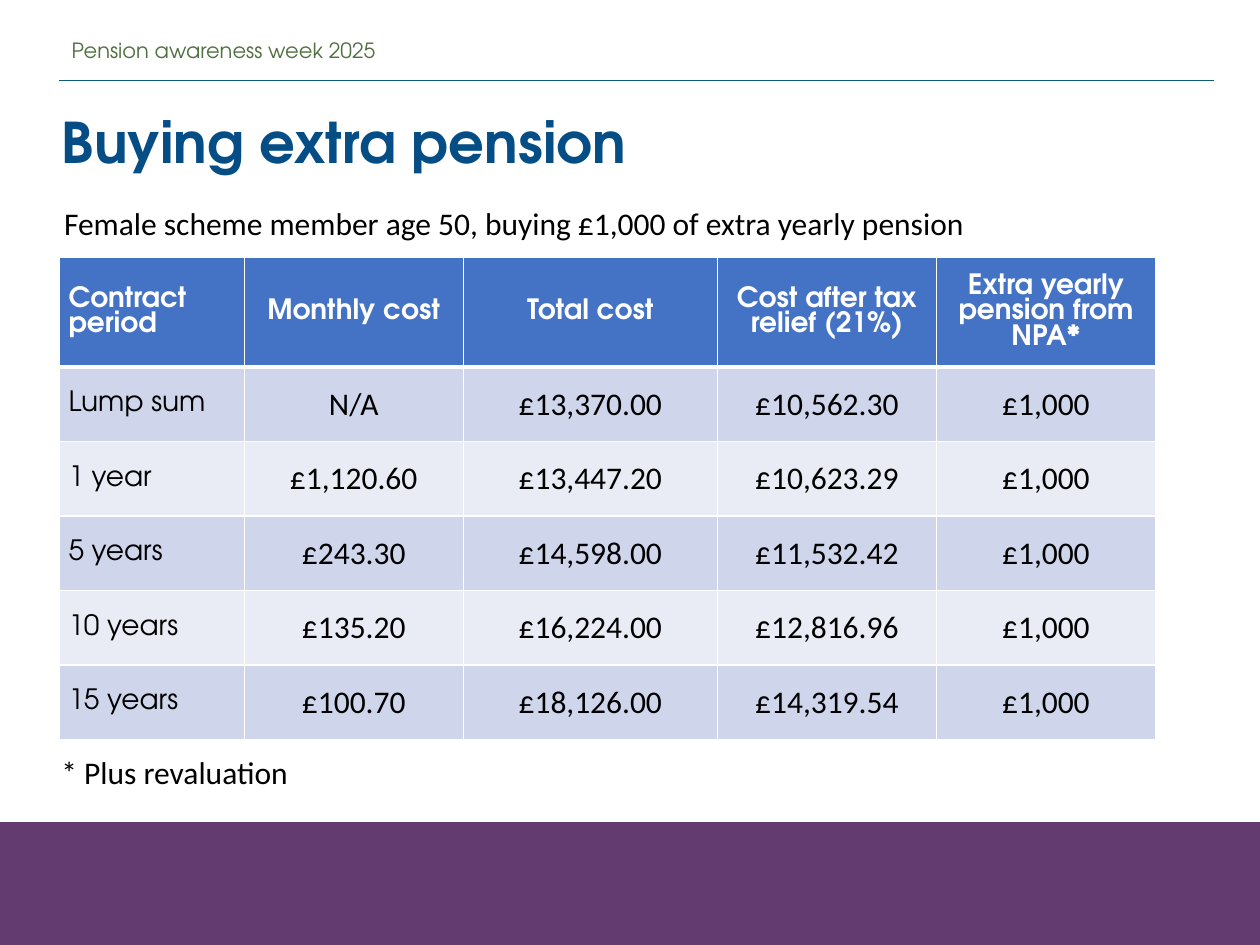
from dataclasses import dataclass

import pptx
import pptx.dml.color
import pptx.enum.shapes
import pptx.enum.text
import pptx.oxml
import pptx.oxml.ns
import pptx.util
from pptx.util import Pt

DISPLAY = "TeX Gyre Adventor"
BODY = "Calibri"
WHITE, BLACK = "FFFFFF", "000000"
HEADER_FILL = "4472C4"
BAND_FILLS = ("CFD5EA", "E9EBF5")
CENTER = pptx.enum.text.PP_ALIGN.CENTER
LEFT = pptx.enum.text.PP_ALIGN.LEFT
MIDDLE = pptx.enum.text.MSO_ANCHOR.MIDDLE
TOP = pptx.enum.text.MSO_ANCHOR.TOP

COLUMN_WIDTHS = (105.6, 125.2, 145.2, 125.2, 125.2)
HEADER_HEIGHT, ROW_HEIGHT = 62.5, 42.6
HEADINGS = (
    "Contract period",
    "Monthly cost",
    "Total cost",
    "Cost after tax relief (21%)",
    "Extra yearly pension from NPA*",
)
CONTRACTS = (
    ("Lump sum", "N/A", "£13,370.00", "£10,562.30", "£1,000"),
    ("1 year", "£1,120.60", "£13,447.20", "£10,623.29", "£1,000"),
    ("5 years", "£243.30", "£14,598.00", "£11,532.42", "£1,000"),
    ("10 years", "£135.20", "£16,224.00", "£12,816.96", "£1,000"),
    ("15 years", "£100.70", "£18,126.00", "£14,319.54", "£1,000"),
)


@dataclass(frozen=True)
class TextStyle:
    font: str
    size: float
    color: str
    bold: bool = False


@dataclass(frozen=True)
class Box:
    left: float
    top: float
    width: float
    height: float

    def lengths(self) -> tuple:
        return Pt(self.left), Pt(self.top), Pt(self.width), Pt(self.height)


@dataclass(frozen=True)
class Label:
    text: str
    box: Box
    style: TextStyle
    anchor: pptx.enum.text.MSO_ANCHOR = TOP


NOTE_STYLE = TextStyle(BODY, 18, BLACK)
HEADING_STYLE = TextStyle(DISPLAY, 16, WHITE, True)
PERIOD_STYLE = TextStyle(DISPLAY, 16, BLACK)
TITLE = Label(
    "Buying extra pension",
    Box(28, 57.6, 672, 46),
    TextStyle(DISPLAY, 32, "044D85", True),
)
LABELS = (
    Label(
        "Pension awareness week 2025",
        Box(33.8, 19.4, 468.7, 18),
        TextStyle(DISPLAY, 12, "4F7040"),
        MIDDLE,
    ),
    Label("* Plus revaluation", Box(28, 427, 658, 29), NOTE_STYLE),
    Label(
        "Female scheme member age 50, buying £1,000 of extra yearly pension",
        Box(29.5, 113, 658, 29),
        NOTE_STYLE,
    ),
)


def rgb(color: str) -> pptx.dml.color.RGBColor:
    return pptx.dml.color.RGBColor.from_string(color)


def write(text_frame, text: str, style: TextStyle, alignment=LEFT) -> None:
    paragraph = text_frame.paragraphs[0]
    paragraph.alignment = alignment
    run = paragraph.add_run()
    run.text = text
    run.font.name = style.font
    run.font.size = Pt(style.size)
    run.font.bold = style.bold
    run.font.color.rgb = rgb(style.color)


def fill_label(shape, label: Label) -> None:
    shape.left, shape.top, shape.width, shape.height = label.box.lengths()
    text_frame = shape.text_frame
    text_frame.word_wrap = True
    text_frame.auto_size = pptx.enum.text.MSO_AUTO_SIZE.NONE
    text_frame.vertical_anchor = label.anchor
    write(text_frame, label.text, label.style)


def add_footer_band(slide) -> None:
    band = slide.shapes.add_shape(
        pptx.enum.shapes.MSO_SHAPE.RECTANGLE, *Box(0, 470.2, 720, 69.8).lengths()
    )
    band.shadow.inherit = False
    band.fill.solid()
    band.fill.fore_color.rgb = rgb("633B71")
    band.line.color.rgb = rgb("633B71")
    band.line.width = Pt(1)


def add_header_rule(slide) -> None:
    rule = slide.shapes.add_connector(
        pptx.enum.shapes.MSO_CONNECTOR.STRAIGHT, Pt(33.8), Pt(46), Pt(694), Pt(46)
    )
    rule.line.color.rgb = rgb("0B5E74")
    rule.line.width = Pt(0.5)
    properties = rule._element.spPr
    properties.append(pptx.oxml.parse_xml(f"<a:effectLst {pptx.oxml.ns.nsdecls('a')}/>"))


def set_borders(cell, top: float, bottom: float) -> None:
    """Give the cell white borders, one point wide at the sides."""
    properties = cell._tc.get_or_add_tcPr()
    for side, width in (("L", 1), ("R", 1), ("T", top), ("B", bottom)):
        properties.append(pptx.oxml.parse_xml(
            f'<a:ln{side} {pptx.oxml.ns.nsdecls("a")} w="{Pt(width)}">'
            f'<a:solidFill><a:srgbClr val="{WHITE}"/></a:solidFill></a:ln{side}>'
        ))


def format_cell(cell, text: str, row: int, column: int) -> None:
    is_header, is_period = row == 0, column == 0
    set_borders(cell, 3 if row == 1 else 1, 3 if is_header else 1)
    cell.fill.solid()
    cell.fill.fore_color.rgb = rgb(HEADER_FILL if is_header else BAND_FILLS[(row - 1) % 2])
    cell.vertical_anchor = MIDDLE
    if is_header or is_period:
        cell.margin_left = cell.margin_right = Pt(5.2)
        cell.margin_top = cell.margin_bottom = Pt(2.9)
    style = HEADING_STYLE if is_header else PERIOD_STYLE if is_period else NOTE_STYLE
    write(cell.text_frame, text, style, LEFT if is_period else CENTER)


def add_cost_table(slide) -> None:
    rows = (HEADINGS, *CONTRACTS)
    height = HEADER_HEIGHT + ROW_HEIGHT * len(CONTRACTS)
    box = Box(34, 147.2, sum(COLUMN_WIDTHS), height)
    table = slide.shapes.add_table(len(rows), len(HEADINGS), *box.lengths()).table
    table.first_row = table.horz_banding = False
    for column, width in zip(table.columns, COLUMN_WIDTHS):
        column.width = Pt(width)
    for row_index, texts in enumerate(rows):
        table.rows[row_index].height = Pt(ROW_HEIGHT if row_index else HEADER_HEIGHT)
        for column_index, text in enumerate(texts):
            format_cell(table.cell(row_index, column_index), text, row_index, column_index)


def main() -> None:
    presentation = pptx.Presentation()
    presentation.slide_width, presentation.slide_height = Pt(720), Pt(540)
    slide = presentation.slides.add_slide(presentation.slide_layouts.get_by_name("Title Only"))
    add_footer_band(slide)
    add_header_rule(slide)
    fill_label(slide.shapes.title, TITLE)
    for label in LABELS:
        fill_label(slide.shapes.add_textbox(*label.box.lengths()), label)
    add_cost_table(slide)
    presentation.save("out.pptx")


if __name__ == "__main__":
    main()
